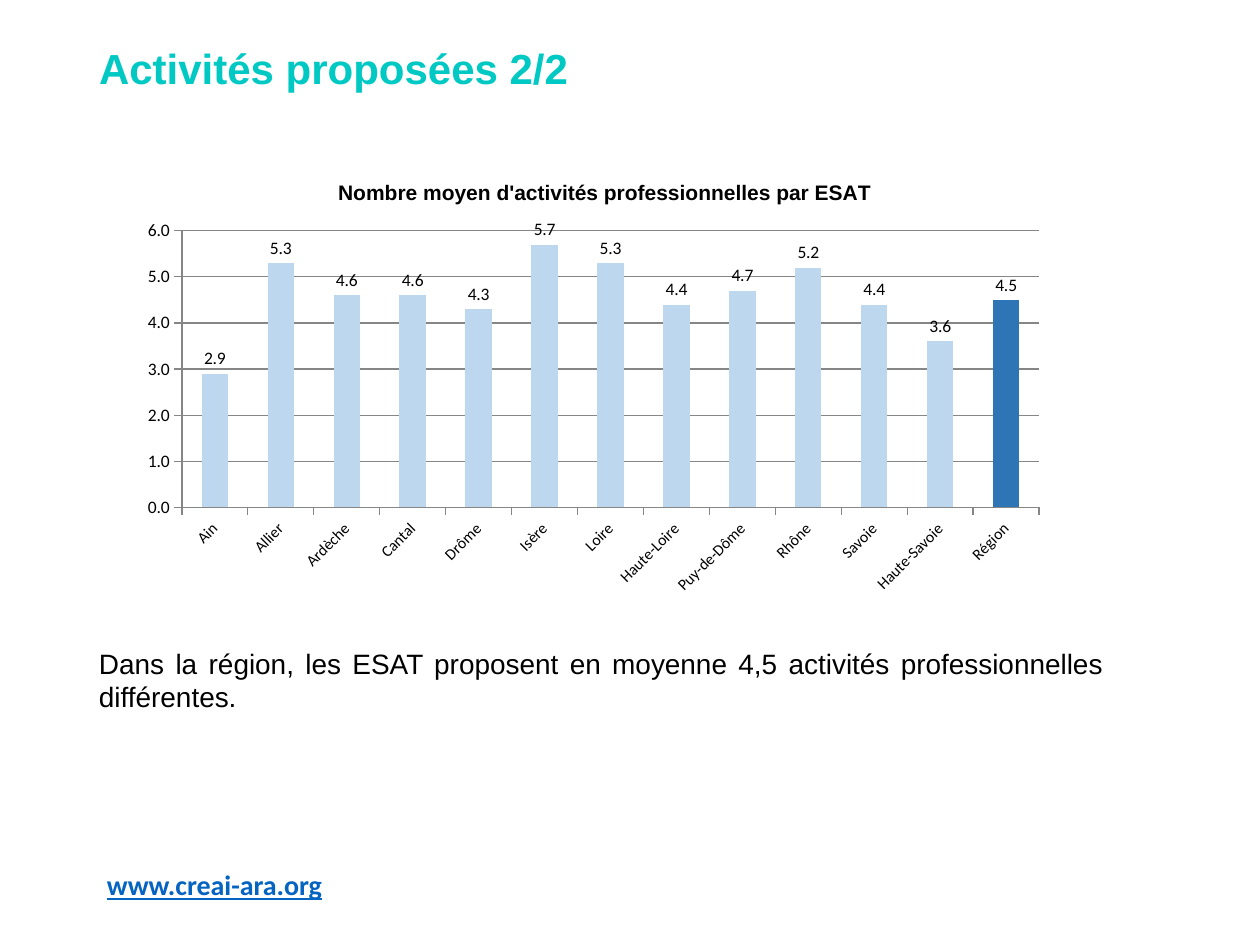
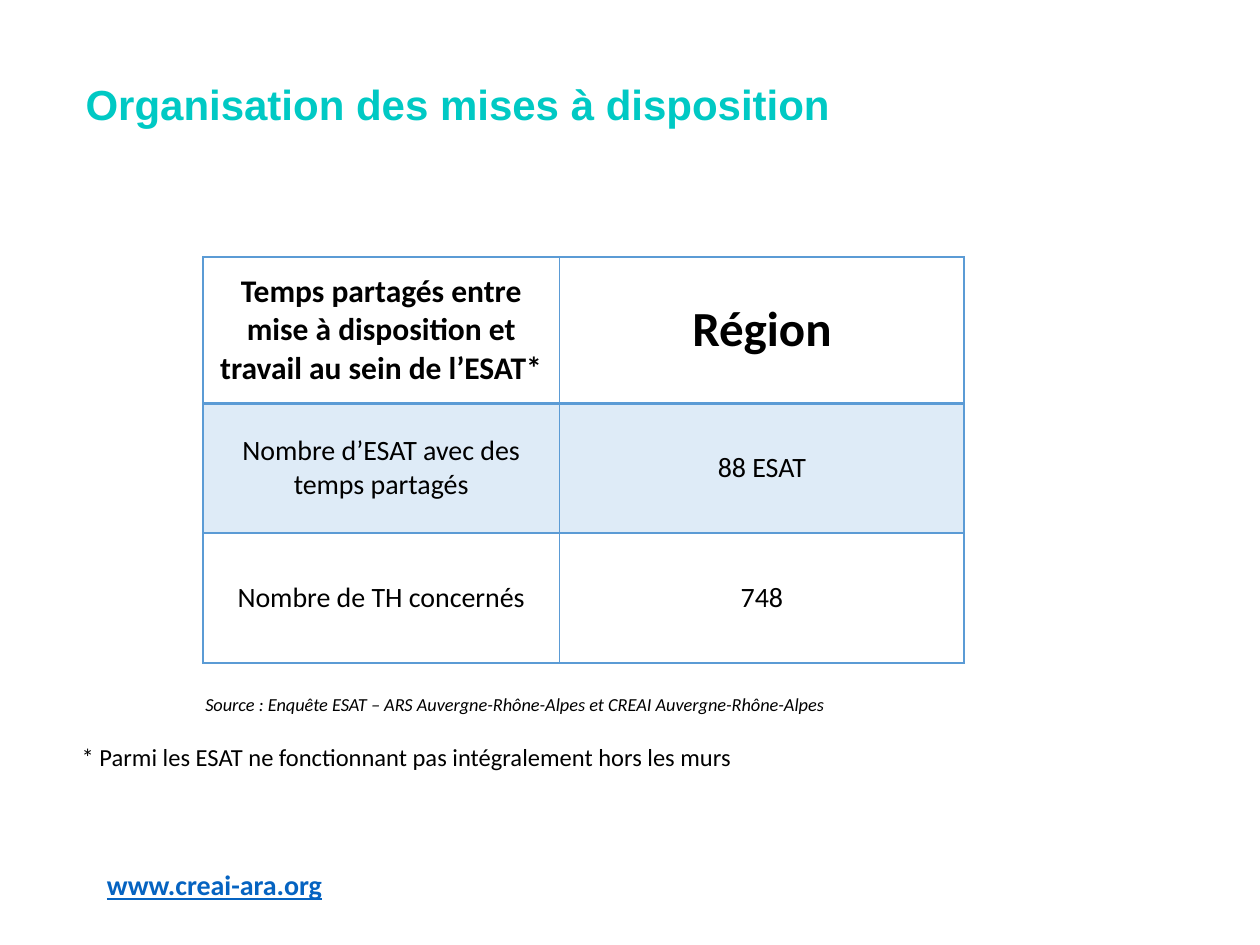
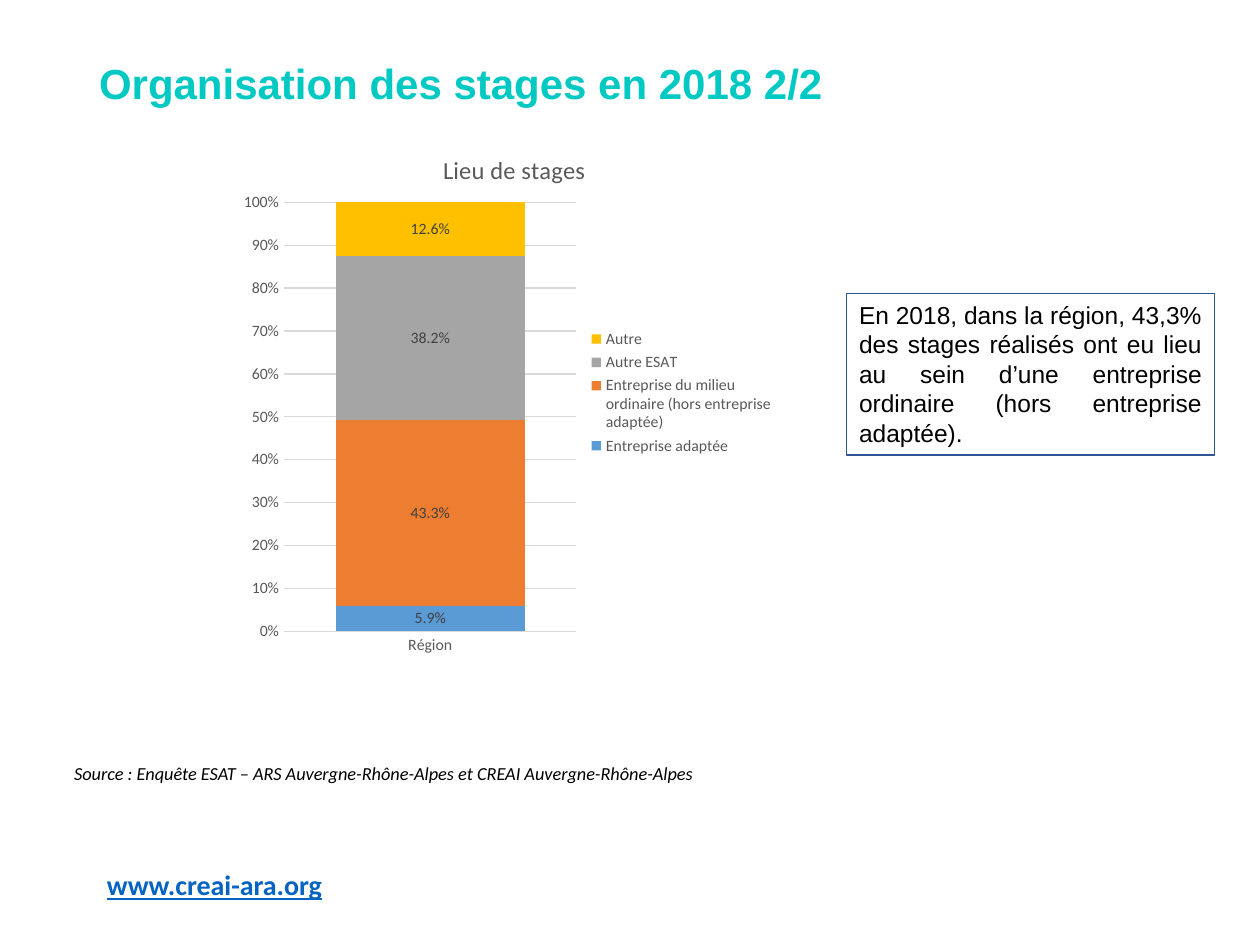
from lxml.etree import SubElement
from pptx import Presentation
from pptx.chart.data import CategoryChartData
from pptx.dml.color import RGBColor
from pptx.enum.chart import XL_CHART_TYPE, XL_LABEL_POSITION, XL_LEGEND_POSITION, XL_TICK_MARK
from pptx.enum.shapes import MSO_SHAPE
from pptx.enum.text import MSO_ANCHOR, PP_ALIGN
from pptx.oxml.ns import qn
from pptx.util import Pt

COLORS = {
    "title": "00C9C4", "text": "000000", "link": "0563C1", "frame": "2F5597",
    "table_line": "5B9BD5", "table_band": "DEEBF7",
    "bar": "BDD7EE", "region_bar": "2E75B6", "axis": "868686",
    "muted": "595959", "grid": "D9D9D9", "label": "404040",
    "adapted": "5B9BD5", "ordinary": "ED7D31", "other_esat": "A5A5A5", "other": "FFC000",
}
WEBSITE = "www.creai-ara.org"
SOURCE = "Source : Enquête ESAT – ARS Auvergne-Rhône-Alpes et CREAI Auvergne-Rhône-Alpes"

ACTIVITIES_TITLE = "Nombre moyen d'activités professionnelles par ESAT"
ACTIVITIES = {
    "Ain": 2.9, "Allier": 5.3, "Ardèche": 4.6, "Cantal": 4.6, "Drôme": 4.3,
    "Isère": 5.7, "Loire": 5.3, "Haute-Loire": 4.4, "Puy-de-Dôme": 4.7,
    "Rhône": 5.2, "Savoie": 4.4, "Haute-Savoie": 3.6, "Région": 4.5,
}
ACTIVITIES_COMMENT = ("Dans la région, les ESAT proposent en moyenne 4,5 activités "
                      "professionnelles différentes.")

SHARED_TIME = [
    ("Temps partagés entre mise à disposition et travail au sein de l’ESAT*", "Région"),
    ("Nombre d’ESAT avec des temps partagés", "88 ESAT"),
    ("Nombre de TH concernés", "748"),
]
SHARED_TIME_NOTE = "* Parmi les ESAT ne fonctionnant pas intégralement hors les murs"
COLUMN_WIDTHS = (203.9, 231.1)
ROW_HEIGHTS = (83.5, 74.2, 74.2)
HEADER_SIZES = (18, 28)

PLACEMENTS = [
    ("Entreprise adaptée", 0.059, "adapted"),
    ("Entreprise du milieu ordinaire (hors entreprise adaptée)", 0.433, "ordinary"),
    ("Autre ESAT", 0.382, "other_esat"),
    ("Autre", 0.126, "other"),
]
PLACEMENTS_COMMENT = ("En 2018, dans la région, 43,3% des stages réalisés ont eu lieu au sein "
                      "d’une entreprise ordinaire (hors entreprise adaptée).")


def rgb(name):
    return RGBColor.from_string(COLORS[name])


def style(font, size, color="text", name="Calibri", bold=False, italic=False):
    font.size, font.name, font.bold, font.italic = Pt(size), name, bold, italic
    font.color.rgb = rgb(color)


def write(frame, text, size, align=PP_ALIGN.LEFT, **look):
    frame.word_wrap = True
    paragraph = frame.paragraphs[0]
    paragraph.text = text
    paragraph.alignment = align
    style(paragraph.font, size, **look)
    return paragraph


def add_text(slide, box, text, size, **look):
    frame = slide.shapes.add_textbox(*map(Pt, box)).text_frame
    return write(frame, text, size, **look)


def add_slide(deck, title, title_box):
    """Add a slide with the shared title style and website footer."""
    slide = deck.slides.add_slide(deck.slide_layouts[6])
    footer = add_text(slide, (54, 492.5, 216, 26.6), WEBSITE, 16, color="link", bold=True)
    footer.font.underline = True
    heading = slide.shapes.add_textbox(*map(Pt, title_box)).text_frame
    heading.vertical_anchor = MSO_ANCHOR.MIDDLE
    write(heading, title, 24, color="title", name="Arial", bold=True).line_spacing = 0.9
    return slide


def set_layout(part, position, **fractions):
    """Fix the place of a chart part, as fractions of the chart."""
    for old in part.findall(qn("c:layout")):
        part.remove(old)
    layout = SubElement(part, qn("c:layout"))
    part.insert(position, layout)
    manual = SubElement(layout, qn("c:manualLayout"))
    if "w" in fractions:
        SubElement(manual, qn("c:layoutTarget")).set("val", "inner")
    for side in "xy":
        SubElement(manual, qn(f"c:{side}Mode")).set("val", "edge")
    for side, fraction in fractions.items():
        SubElement(manual, qn(f"c:{side}")).set("val", str(fraction))


def add_bars(slide, kind, box, data, title, title_at, plot_at, gap, title_look):
    chart = slide.shapes.add_chart(kind, *map(Pt, box), data).chart
    style(chart.font, 10)
    chart.has_title = True
    write(chart.chart_title.text_frame, title, align=PP_ALIGN.CENTER, **title_look)
    heading = chart.chart_title._element
    set_layout(heading, 1, **dict(zip("xy", title_at)))
    set_layout(heading.getparent().find(qn("c:plotArea")), 0, **dict(zip("xywh", plot_at)))
    plot = chart.plots[0]
    plot.gap_width = gap
    plot.vary_by_categories = False
    return chart


def style_axes(chart, line, text, sizes, tick, number_format):
    for axis, size in zip((chart.category_axis, chart.value_axis), sizes):
        axis.major_tick_mark = tick
        axis.minor_tick_mark = XL_TICK_MARK.NONE
        axis.format.line.color.rgb = rgb(line)
        axis.format.line.width = Pt(0.75)
        style(axis.tick_labels.font, size, text)
    values = chart.value_axis
    values.has_major_gridlines = True
    values.major_gridlines.format.line.color.rgb = rgb(line)
    values.major_gridlines.format.line.width = Pt(0.75)
    values.minimum_scale = 0
    values.tick_labels.number_format = number_format
    values.tick_labels.number_format_is_linked = False


def fill_series(series, color, number_format, size, text, position):
    series.format.fill.solid()
    series.format.fill.fore_color.rgb = rgb(color)
    labels = series.data_labels
    labels.show_value = True
    labels.number_format = number_format
    labels.number_format_is_linked = False
    labels.position = position
    style(labels.font, size, text)


def add_border(cell, side, width):
    line = SubElement(cell._tc.get_or_add_tcPr(), qn(f"a:ln{side}"), w=str(Pt(width)))
    fill = SubElement(line, qn("a:solidFill"))
    SubElement(fill, qn("a:srgbClr"), val=COLORS["table_line"])


def activities_slide(deck):
    slide = add_slide(deck, "Activités proposées 2/2", (49.5, 8.6, 620.6, 63.4))
    add_text(slide, (49.5, 365.8, 588.2, 46), ACTIVITIES_COMMENT, 16,
             align=PP_ALIGN.JUSTIFY, name="Arial")
    data = CategoryChartData(number_format="0.0")
    data.categories = list(ACTIVITIES)
    data.add_series("Series 1", list(ACTIVITIES.values()))
    chart = add_bars(slide, XL_CHART_TYPE.COLUMN_CLUSTERED, (71.3, 87.1, 544.3, 263.5), data,
                     ACTIVITIES_TITLE, (0.22, 0.05), (0.06, 0.17, 0.9, 0.6), 150,
                     {"size": 12, "name": "Arial", "bold": True})
    chart.has_legend = False
    style_axes(chart, "axis", "text", (9, 10), XL_TICK_MARK.OUTSIDE, "0.0")
    chart.value_axis.maximum_scale = 6
    chart.value_axis.major_unit = 1
    slant = chart.category_axis._element.find(qn("c:txPr")).find(qn("a:bodyPr"))
    slant.set("rot", "-2700000")
    slant.set("vert", "horz")
    bars = chart.plots[0].series[0]
    fill_series(bars, "bar", "0.0", 10, "text", XL_LABEL_POSITION.OUTSIDE_END)
    region = bars.points[list(ACTIVITIES).index("Région")].format.fill
    region.solid()
    region.fore_color.rgb = rgb("region_bar")


def shared_time_slide(deck):
    slide = add_slide(deck, "Organisation des mises à disposition", (41.8, 37.4, 643, 47.5))
    table = slide.shapes.add_table(
        len(SHARED_TIME), len(COLUMN_WIDTHS), Pt(115.9), Pt(146.9),
        Pt(sum(COLUMN_WIDTHS)), Pt(sum(ROW_HEIGHTS))).table
    for column, width in zip(table.columns, COLUMN_WIDTHS):
        column.width = Pt(width)
    for row, height in zip(table.rows, ROW_HEIGHTS):
        row.height = Pt(height)
    for r, texts in enumerate(SHARED_TIME):
        for c, text in enumerate(texts):
            cell = table.cell(r, c)
            cell.vertical_anchor = MSO_ANCHOR.MIDDLE
            write(cell.text_frame, text, HEADER_SIZES[c] if r == 0 else 16,
                  align=PP_ALIGN.CENTER, bold=r == 0)
            header_edge = {0: "B", 1: "T"}.get(r)
            for side in "LRTB":
                add_border(cell, side, 2 if side == header_edge else 1)
            if r == 1:
                cell.fill.solid()
                cell.fill.fore_color.rgb = rgb("table_band")
            else:
                cell.fill.background()
    add_text(slide, (39.6, 420.5, 656.6, 24.5), SHARED_TIME_NOTE, 14)
    add_text(slide, (110.2, 392.4, 440.6, 20.2), SOURCE, 10.5, italic=True)


def placements_slide(deck):
    slide = add_slide(deck, "Organisation des stages en 2018 2/2", (49.5, 28.8, 620.6, 40.3))
    comment = slide.shapes.add_shape(MSO_SHAPE.RECTANGLE, *map(Pt, (483.8, 167.8, 210.2, 92.2)))
    comment.shadow.inherit = False
    comment.fill.background()
    comment.line.color.rgb = rgb("frame")
    comment.line.width = Pt(0.75)
    comment.text_frame.vertical_anchor = MSO_ANCHOR.TOP
    write(comment.text_frame, PLACEMENTS_COMMENT, 14, align=PP_ALIGN.JUSTIFY, name="Arial")
    add_text(slide, (35.3, 432, 440.6, 20.2), SOURCE, 10.5, italic=True)

    data = CategoryChartData(number_format="0.0%")
    data.categories = ["Région"]
    for place, share, _ in PLACEMENTS:
        data.add_series(place, [share])
    chart = add_bars(slide, XL_CHART_TYPE.COLUMN_STACKED_100, (133.9, 69.1, 315.4, 310.3), data,
                     "Lieu de stages", (0.37, 0.05), (0.09, 0.15, 0.53, 0.79), 55,
                     {"size": 14, "color": "muted"})
    chart.plots[0].overlap = 100
    style_axes(chart, "grid", "muted", (9, 9), XL_TICK_MARK.NONE, "0%")
    chart.value_axis.format.line.fill.background()
    chart.value_axis.maximum_scale = 1
    chart.value_axis.major_unit = 0.1
    for series, (_, _, color) in zip(chart.plots[0].series, PLACEMENTS):
        fill_series(series, color, "0.0%", 9, "label", XL_LABEL_POSITION.CENTER)
    chart.has_legend = True
    chart.legend.position = XL_LEGEND_POSITION.RIGHT
    chart.legend.include_in_layout = False
    style(chart.legend.font, 9, "muted")


def main():
    deck = Presentation()
    deck.slide_width, deck.slide_height = Pt(720), Pt(540)
    activities_slide(deck)
    shared_time_slide(deck)
    placements_slide(deck)
    deck.save("out.pptx")


if __name__ == "__main__":
    main()
